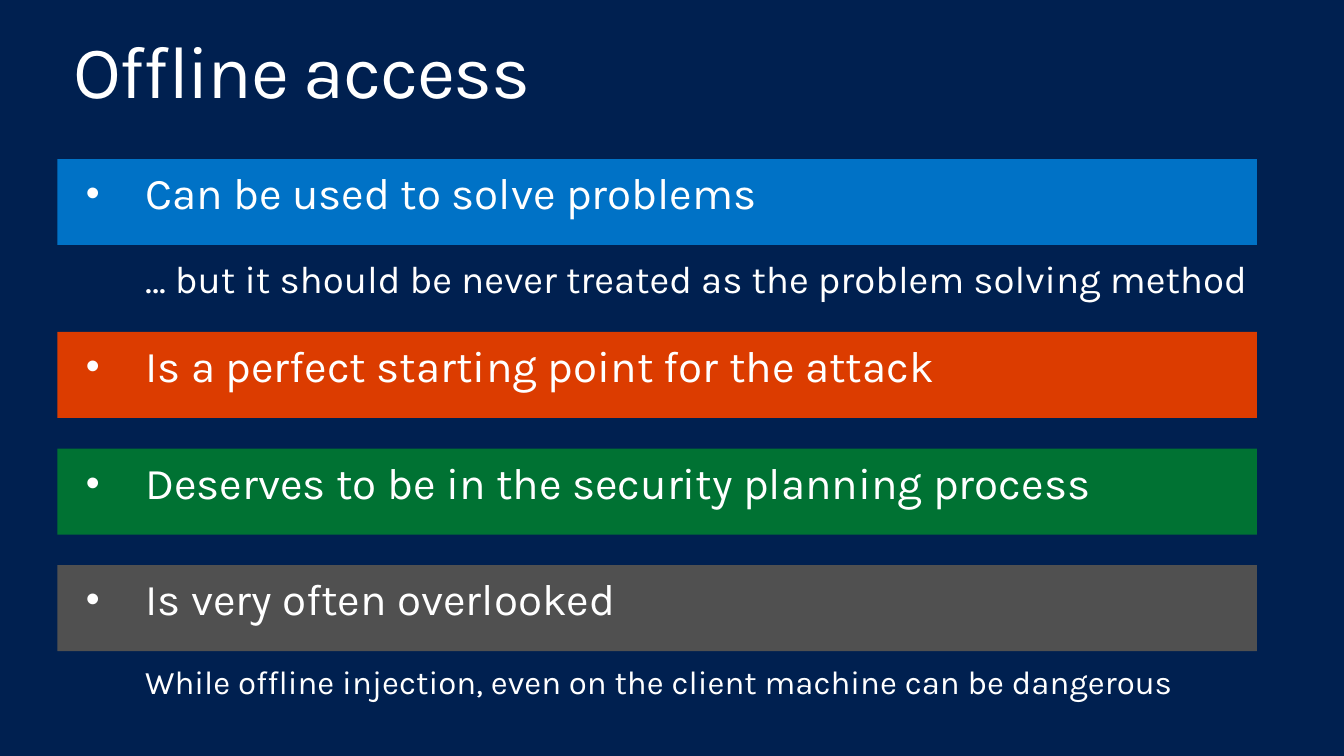
from dataclasses import dataclass

from lxml import etree
from pptx import Presentation
from pptx.dml.color import RGBColor
from pptx.enum.shapes import MSO_SHAPE
from pptx.enum.text import MSO_ANCHOR, PP_ALIGN
from pptx.oxml.ns import qn
from pptx.util import Inches, Pt

RECTANGLE = MSO_SHAPE.RECTANGLE
TOP = MSO_ANCHOR.TOP
LEFT = PP_ALIGN.LEFT

NAVY = RGBColor(0x00, 0x20, 0x50)
BLUE = RGBColor(0x00, 0x72, 0xC6)
ORANGE = RGBColor(0xDC, 0x3C, 0x00)
GREEN = RGBColor(0x00, 0x72, 0x33)
GRAY = RGBColor(0x50, 0x50, 0x50)
WHITE = RGBColor(0xFF, 0xFF, 0xFF)
FONT = "Karla"

# Layout grid in inches
PAGE_WIDTH, PAGE_HEIGHT = 13.6, 7.65
MARGIN = 0.58
BAR_WIDTH, BAR_HEIGHT = 12.14, 0.87
BAR_PITCH = 1.18
FIRST_BAR_TOP = 1.61
NOTED_PITCH = 1.75
LABEL_SHIFT_X, LABEL_SHIFT_Y = 0.07, 0.08
LABEL_WIDTH, LABEL_HEIGHT = 11.96, 0.64
NOTE_LEFT, NOTE_WIDTH = 1.35, 11.86
NOTE_SHIFT = 0.97


@dataclass(frozen=True)
class Point:
    text: str
    color: RGBColor
    note: str = ""
    note_size: float = 28
    note_height: float = 0.57


POINTS = [
    Point("Can be used to solve problems", BLUE,
          "… but it should be never treated as the problem solving method"),
    Point("Is a perfect starting point for the attack", ORANGE),
    Point("Deserves to be in the security planning process", GREEN),
    Point("Is very often overlooked", GRAY,
          "While offline injection, even on the client machine can be dangerous",
          24, 0.5),
]


def write_text(box, text: str, *, size: float, insets: tuple, indent: float = 0,
               hanging: float = 0, before: float = 0, line_spacing: float = 0.9,
               tracking: float = 0, bullet: str = "") -> None:
    """Insets run left, top, right, bottom; indents are in inches."""
    frame = box.text_frame
    frame.word_wrap = True
    frame.vertical_anchor = TOP
    (frame.margin_left, frame.margin_top,
     frame.margin_right, frame.margin_bottom) = map(Inches, insets)
    para = frame.paragraphs[0]
    para.alignment = LEFT
    para.line_spacing = line_spacing
    para.space_before = Pt(before)
    span = para.add_run()
    span.text = text
    span.font.name = FONT
    span.font.size = Pt(size)
    span.font.color.rgb = WHITE
    if tracking:
        span.font._element.set("spc", str(round(tracking * 100)))
    properties = para._p.get_or_add_pPr()
    properties.set("marL", str(Inches(indent)))
    properties.set("indent", str(Inches(-hanging)))
    if bullet:
        etree.SubElement(properties, qn("a:buSzPct"), val="90000")
        etree.SubElement(properties, qn("a:buFont"), typeface="Arial")
        etree.SubElement(properties, qn("a:buChar"), char=bullet)


def add_bar(page, point: Point, top: float) -> None:
    group = page.shapes.add_group_shape()
    bar = group.shapes.add_shape(RECTANGLE, Inches(MARGIN), Inches(top),
                                 Inches(BAR_WIDTH), Inches(BAR_HEIGHT))
    bar.shadow.inherit = False
    bar.fill.solid()
    bar.fill.fore_color.rgb = point.color
    bar.line.fill.background()
    label = group.shapes.add_textbox(
        Inches(MARGIN + LABEL_SHIFT_X), Inches(top + LABEL_SHIFT_Y),
        Inches(LABEL_WIDTH), Inches(LABEL_HEIGHT))
    write_text(label, point.text, size=32, insets=(0.2, 0.05, 0.1, 0.05),
               indent=0.62, hanging=0.6, before=6.1, bullet="•")


def add_note(page, point: Point, top: float) -> None:
    note = page.shapes.add_textbox(Inches(NOTE_LEFT), Inches(top + NOTE_SHIFT),
                                   Inches(NOTE_WIDTH), Inches(point.note_height))
    write_text(note, point.note, size=point.note_size,
               insets=(0.1, 0.05, 0.1, 0.05), indent=0.02, before=6.1)


def main() -> None:
    deck = Presentation()
    deck.slide_width, deck.slide_height = Inches(PAGE_WIDTH), Inches(PAGE_HEIGHT)
    page = deck.slides.add_slide(deck.slide_layouts.get_by_name("Title Only"))
    page.background.fill.solid()
    page.background.fill.fore_color.rgb = NAVY

    title = page.shapes.title
    title.left, title.top = Inches(MARGIN), Inches(0.25)
    title.width, title.height = Inches(12.44), Inches(0.68)
    write_text(title, "Offline access", size=54, tracking=-1,
               insets=(0.16, 0.1, 0.16, 0.1))

    top = FIRST_BAR_TOP
    for point in POINTS:
        add_bar(page, point, top)
        if point.note:
            add_note(page, point, top)
        top += NOTED_PITCH if point.note else BAR_PITCH
    deck.save("out.pptx")


if __name__ == "__main__":
    main()
